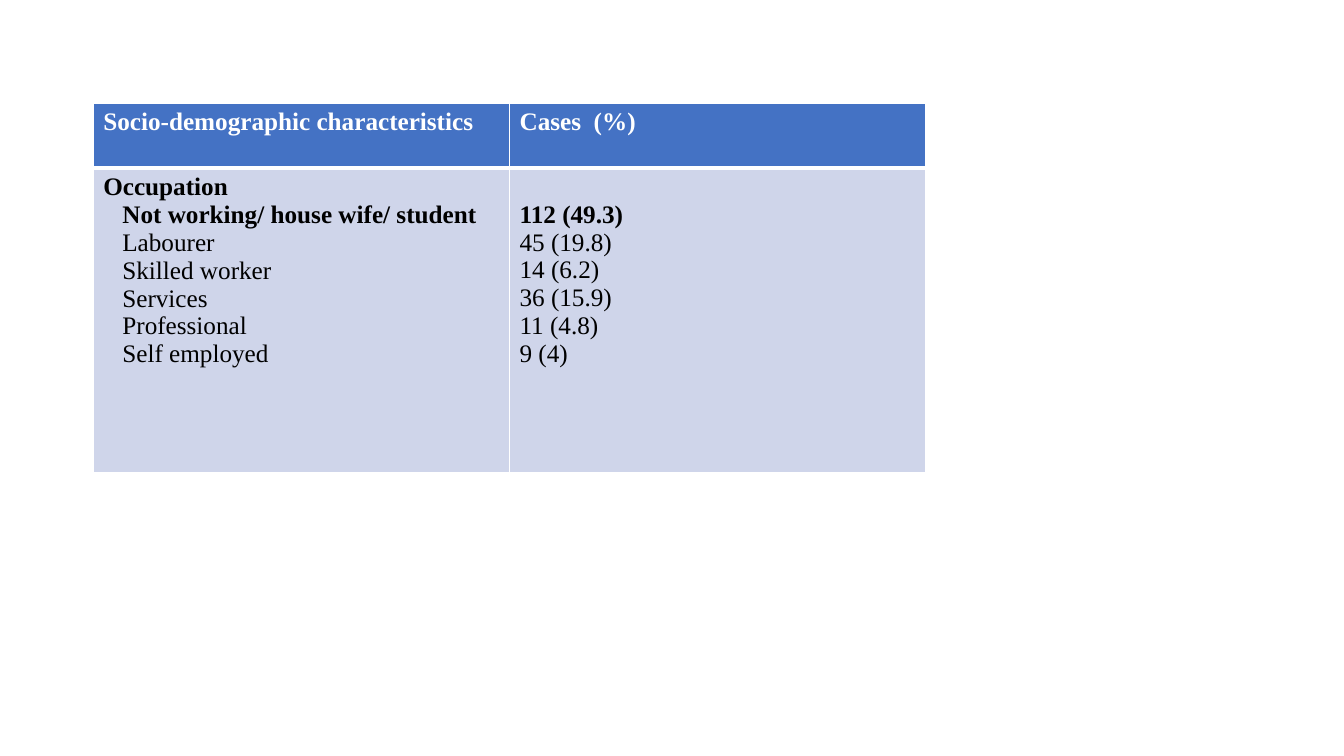
from lxml.etree import SubElement
from pptx import Presentation
from pptx.dml.color import RGBColor
from pptx.oxml.ns import qn
from pptx.util import Cm, Pt

WHITE = RGBColor(0xFF, 0xFF, 0xFF)
BLACK = RGBColor(0x00, 0x00, 0x00)
HEADER_BLUE = RGBColor(0x44, 0x72, 0xC4)
BODY_BLUE = RGBColor(0xCF, 0xD5, 0xEA)
FONT = "Times New Roman"
INDENT = Cm(0.48)
LINE_HEIGHT = Cm(0.7)

HEADINGS = ["Socio-demographic characteristics", "Cases  (%)"]
OCCUPATIONS = [
    ("Not working/ house wife/ student", "112 (49.3)"),
    ("Labourer", "45 (19.8)"),
    ("Skilled worker", "14 (6.2)"),
    ("Services", "36 (15.9)"),
    ("Professional", "11 (4.8)"),
    ("Self employed", "9 (4)"),
]


def style_cell(cell, fill, top, bottom):
    """Draw the white borders, then fill the cell."""
    properties = cell._tc.get_or_add_tcPr()
    for side, width in (("L", 1), ("R", 1), ("T", top), ("B", bottom)):
        line = SubElement(properties, qn(f"a:ln{side}"), w=str(Pt(width)))
        color = SubElement(line, qn("a:solidFill"))
        SubElement(color, qn("a:srgbClr"), val=str(WHITE))
    cell.fill.solid()
    cell.fill.fore_color.rgb = fill


def write_lines(cell, lines, color):
    """Write one paragraph per (text, bold, indent) line."""
    frame = cell.text_frame
    for index, (text, bold, indent) in enumerate(lines):
        para = frame.add_paragraph() if index else frame.paragraphs[0]
        if indent:
            para._p.get_or_add_pPr().set("marL", str(indent))
        span = para.add_run()
        span.text = text
        span.font.name = FONT
        span.font.size = Pt(18)
        span.font.bold = bold
        span.font.color.rgb = color


# Slide
deck = Presentation()
deck.slide_width, deck.slide_height = Cm(33.87), Cm(19.05)
page = deck.slides.add_slide(deck.slide_layouts[6])

# Table grid
table = page.shapes.add_table(2, 2, Cm(2.35), Cm(2.6), Cm(20.98), Cm(9.3)).table
for column in table.columns:
    column.width = Cm(10.49)
table.rows[0].height = Cm(1.63)
table.rows[1].height = Cm(7.67)

# Header row
for column, heading in enumerate(HEADINGS):
    cell = table.cell(0, column)
    style_cell(cell, HEADER_BLUE, top=1, bottom=3)
    write_lines(cell, [(heading, True, 0)], WHITE)

# Occupation row, with the largest group in bold
names = [("Occupation", True, 0)]
counts = []
for index, (name, count) in enumerate(OCCUPATIONS):
    names.append((name, index == 0, INDENT))
    counts.append((count, index == 0, 0))
for column, lines in enumerate((names, counts)):
    cell = table.cell(1, column)
    style_cell(cell, BODY_BLUE, top=3, bottom=1)
    write_lines(cell, lines, BLACK)

# Counts start one line down, level with the first occupation
counts_cell = table.cell(1, 1)
counts_cell.margin_top = counts_cell.margin_top + LINE_HEIGHT

deck.save("out.pptx")
